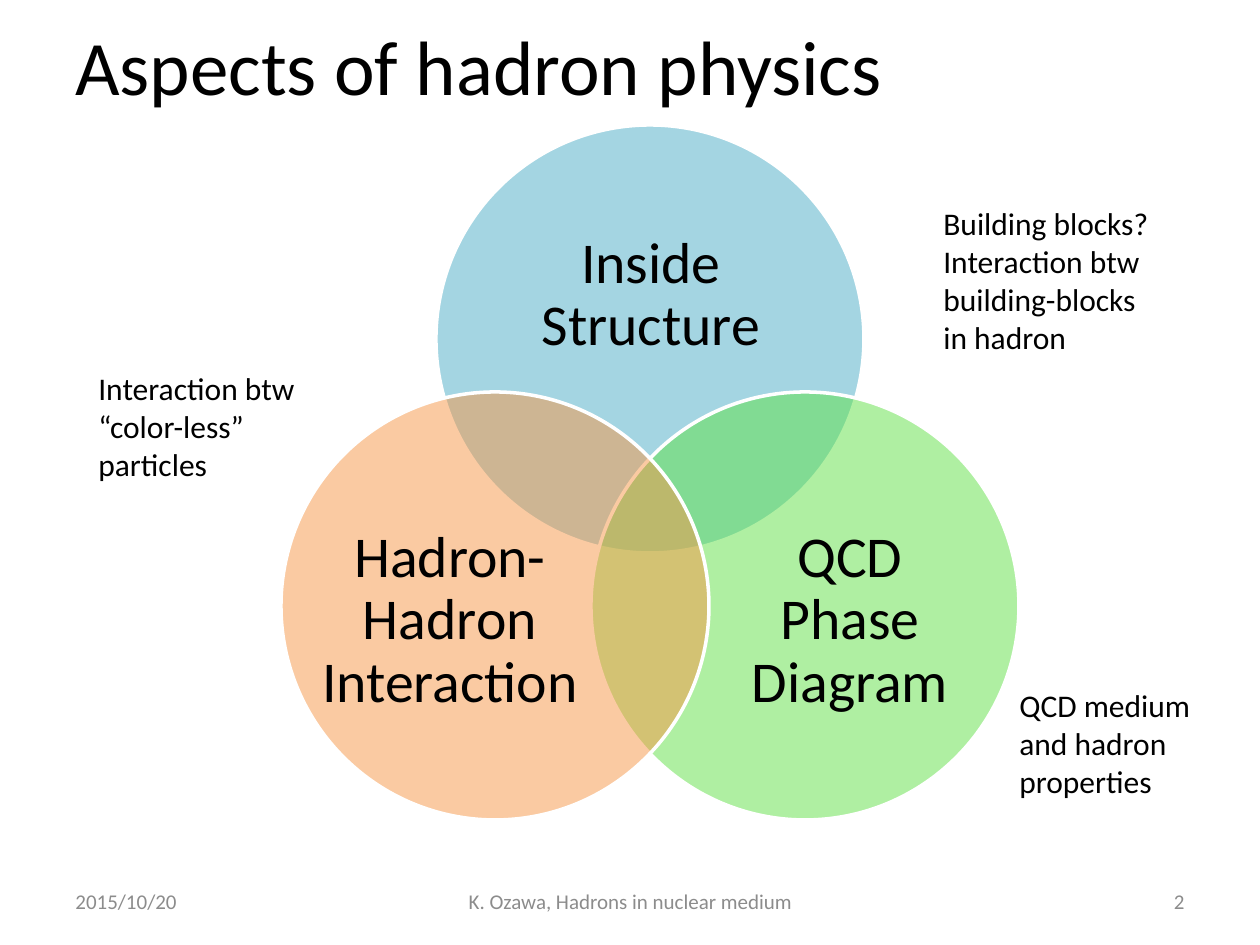
"""Builds a slide with a three-circle diagram of hadron physics and side notes."""
from lxml import etree
from pptx import Presentation, util as u
from pptx.dml.color import RGBColor
from pptx.enum import shapes, text
from pptx.oxml.ns import qn


def paint(form, tint):
    form.solid()
    form.fore_color.rgb = RGBColor.from_string(tint)


def write(words, box, size, tint="000000", side="LEFT", mid=True, pad=True):
    area = slide.shapes.add_textbox(*map(px, box))
    frame = area.text_frame
    frame.word_wrap = True
    frame.vertical_anchor = text.MSO_ANCHOR.MIDDLE if mid else text.MSO_ANCHOR.TOP
    para = frame.paragraphs[0]
    para.alignment = text.PP_ALIGN[side]
    if not pad:
        frame.margin_left = frame.margin_right = 0
        frame.margin_top = frame.margin_bottom = 0
        para.line_spacing = 0.9
    run = para.add_run()
    run.text = words
    run.font.name = "Calibri"
    run.font.size = u.Pt(size)
    paint(run.font.fill, tint)


px = lambda n: u.Inches(n / 126)
deck = Presentation()
deck.slide_width, deck.slide_height = px(1260), px(945)
slide = deck.slides.add_slide(deck.slide_layouts[6])

write("Aspects of hadron physics", (63, 6, 1134, 117), 44)

foot = [
    ("2015/10/20", 63, 294, "LEFT"),
    ("K. Ozawa, Hadrons in nuclear medium", 431, 399, "CENTER"),
    ("2", 903, 294, "RIGHT"),
]
for words, left, wide, side in foot:
    write(words, (left, 876, wide, 50), 12, "8C8C8C", side)

size = 428
rings = [
    ("Inside Structure", "4BACC6", 436, 125, (494, 199, 314, 193)),
    ("QCD Phase Diagram", "60E146", 591, 392, (726, 503, 248, 236)),
    ("Hadron-Hadron Interaction", "F79646", 281, 392, (318, 503, 264, 236)),
]
for words, tint, left, top, box in rings:
    ring = slide.shapes.add_shape(
        shapes.MSO_SHAPE.OVAL, px(left), px(top), px(size), px(size))
    ring.shadow.inherit = False
    paint(ring.fill, tint)
    shade = ring.fill._xPr.find(qn("a:solidFill"))[0]
    etree.SubElement(shade, qn("a:alpha")).set("val", "50000")
    paint(ring.line.fill, "FFFFFF")
    ring.line.width = u.Pt(2)
    write(words, box, 33, side="CENTER", pad=False)

notes = [
    ("Building blocks? Interaction btw building-blocks in hadron", (931, 198, 238, 165)),
    ("QCD medium and hadron properties", (1007, 680, 238, 127)),
    ("Interaction btw “color-less” particles", (86, 363, 228, 127)),
]
for words, box in notes:
    write(words, box, 18, mid=False)

deck.save("out.pptx")
